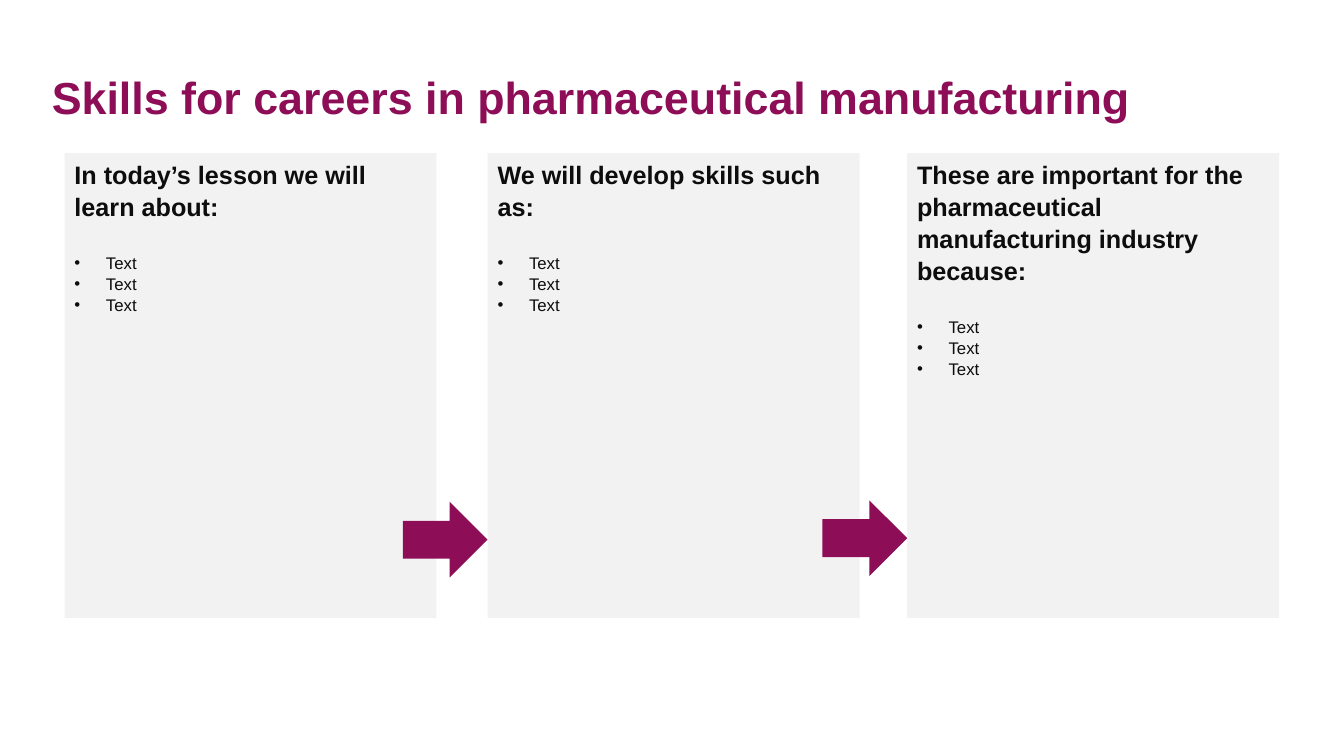
from lxml import etree
from pptx import Presentation
from pptx.dml.color import RGBColor
from pptx.enum.shapes import MSO_SHAPE
from pptx.enum.text import MSO_ANCHOR, MSO_AUTO_SIZE, PP_ALIGN
from pptx.oxml.ns import qn
from pptx.util import Pt

RECTANGLE, RIGHT_ARROW = MSO_SHAPE.RECTANGLE, MSO_SHAPE.RIGHT_ARROW
TOP, MIDDLE = MSO_ANCHOR.TOP, MSO_ANCHOR.MIDDLE
LEFT = PP_ALIGN.LEFT
NO_AUTOFIT = MSO_AUTO_SIZE.NONE

COLORS = {"plum": "8D0E57", "panel": "F2F2F2", "text": "0D0D0D"}
PANEL_TOP, PANEL_WIDTH, PANEL_HEIGHT = 109.4, 265.7, 332
ARROW_WIDTH, ARROW_HEIGHT = 60.5, 54
BULLET_INDENT = 22.5
LIST_ITEMS = ["Text"] * 3

# Left edge, heading, and top of the arrow that points at the panel
PANELS = [
    (46.1, "In today’s lesson we will learn about:", None),
    (348.3, "We will develop skills such as:", 358.5),
    (648, "These are important for the pharmaceutical manufacturing industry because:", 357.4),
]


def add_filled_shape(kind, left, top, width, height, color):
    shape = slide.shapes.add_shape(kind, Pt(left), Pt(top), Pt(width), Pt(height))
    shape.shadow.inherit = False
    shape.fill.solid()
    shape.fill.fore_color.rgb = RGBColor.from_string(COLORS[color])
    shape.line.fill.background()
    return shape


def write(paragraph, text, size, bold, color, line_spacing):
    paragraph.alignment = LEFT
    paragraph.line_spacing = line_spacing
    run = paragraph.add_run()
    run.text = text
    font_format = {"name": "Arial", "size": Pt(size), "bold": bold}
    for attribute, value in font_format.items():
        setattr(run.font, attribute, value)
    run.font.color.rgb = RGBColor.from_string(COLORS[color])


presentation = Presentation()
presentation.slide_width, presentation.slide_height = Pt(960), Pt(540)
slide = presentation.slides.add_slide(presentation.slide_layouts[5])

title = slide.shapes.title
title_format = {"left": Pt(29.8), "top": Pt(19.4), "width": Pt(845.3), "height": Pt(104.4)}
for attribute, value in title_format.items():
    setattr(title, attribute, value)
title.text_frame.auto_size = NO_AUTOFIT
title.text_frame.vertical_anchor = MIDDLE
write(title.text_frame.paragraphs[0], "Skills for careers in pharmaceutical manufacturing",
      32, True, "plum", 0.9)

for left, heading, arrow_top in PANELS:
    panel = add_filled_shape(RECTANGLE, left, PANEL_TOP, PANEL_WIDTH, PANEL_HEIGHT, "panel")
    frame = panel.text_frame
    frame.word_wrap = True
    frame.vertical_anchor = TOP
    write(frame.paragraphs[0], heading, 18, True, "text", 1.05)
    for index, item in enumerate(LIST_ITEMS):
        paragraph = frame.add_paragraph()
        properties = paragraph._p.get_or_add_pPr()
        properties.set("marL", str(Pt(BULLET_INDENT)))
        properties.set("indent", str(-Pt(BULLET_INDENT)))
        etree.SubElement(properties, qn("a:buFont"), typeface="Arial")
        etree.SubElement(properties, qn("a:buChar"), char="•")
        if index == 0:
            paragraph.space_before = Pt(21.6)
        write(paragraph, item, 12, False, "text", 1.05)

for left, heading, arrow_top in PANELS[1:]:
    add_filled_shape(RIGHT_ARROW, left - ARROW_WIDTH, arrow_top, ARROW_WIDTH, ARROW_HEIGHT, "plum")

presentation.save("out.pptx")
